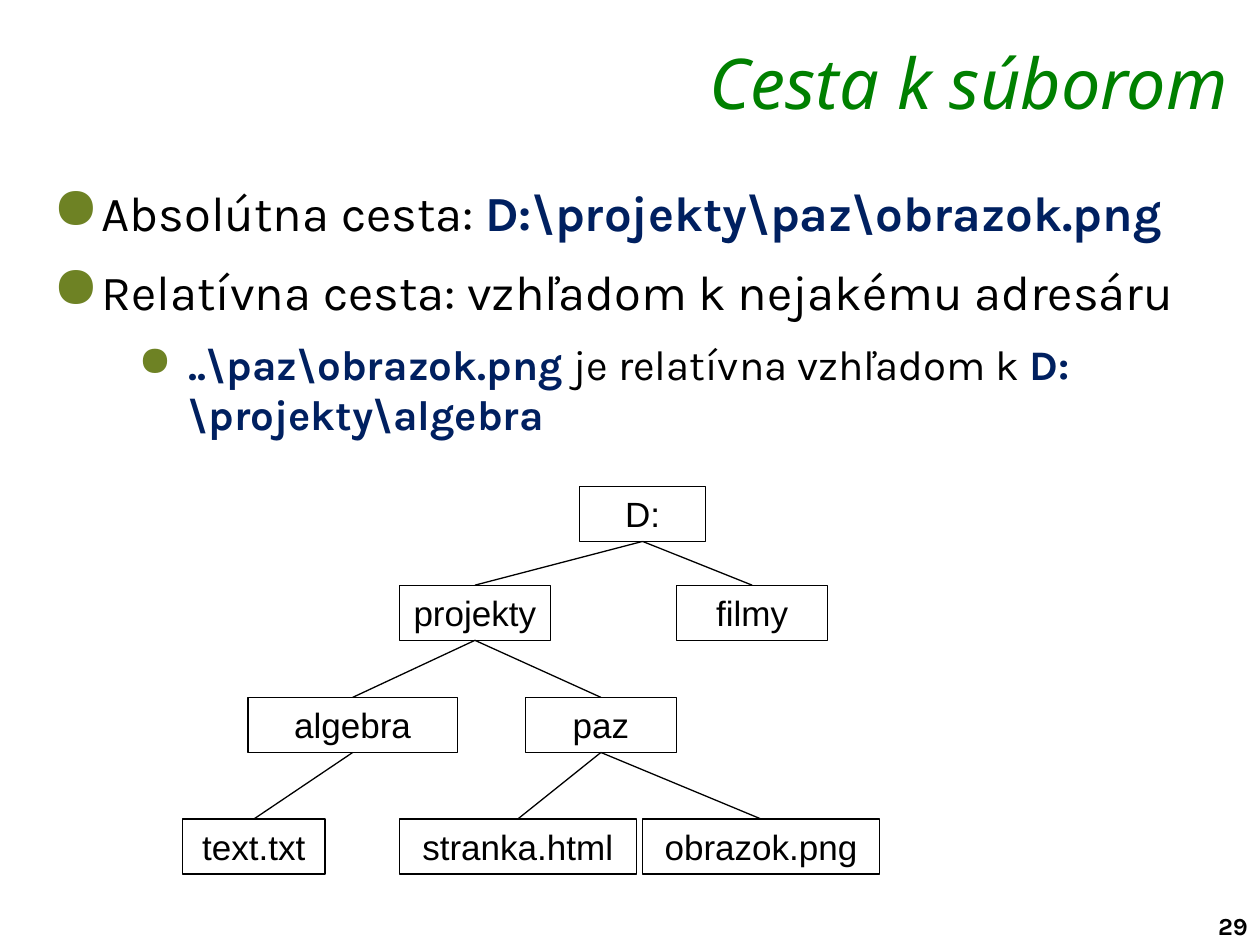
from lxml import etree
from pptx import Presentation
from pptx.dml.color import RGBColor
from pptx.enum.shapes import MSO_CONNECTOR as CONN, MSO_SHAPE as SHAPE
from pptx.enum.text import MSO_ANCHOR as ANCHOR, PP_ALIGN as ALIGN
from pptx.oxml.ns import qn
from pptx.util import Pt

BLACK = RGBColor(0x00, 0x00, 0x00)
WHITE = RGBColor(0xFF, 0xFF, 0xFF)
GREEN = RGBColor(0x00, 0x80, 0x00)
NAVY = RGBColor(0x00, 0x20, 0x60)
OLIVE = "6E8224"

prs = Presentation()
prs.slide_width, prs.slide_height = Pt(720), Pt(540)
s = prs.slides.add_slide(prs.slide_layouts[6])


def add_run(p, text, size, font, color, bold=False, italic=False):
    r = p.add_run()
    r.text = text
    r.font.size, r.font.name = Pt(size), font
    r.font.bold, r.font.italic = bold, italic
    r.font.color.rgb = color


def add_text_box(x, y, w, h):
    tf = s.shapes.add_textbox(Pt(x), Pt(y), Pt(w), Pt(h)).text_frame
    tf.word_wrap = True
    return tf


# Title
tf = add_text_box(165, 22.3, 543.5, 41.8)
tf.margin_top = tf.margin_bottom = 0
p = tf.paragraphs[0]
p.alignment = ALIGN.RIGHT
add_run(p, "Cesta k súborom", 40, "Noto Sans", GREEN, italic=True)

# Page number
p = add_text_box(689, 517, 37, 24).paragraphs[0]
add_run(p, "29", 14, "Karla", BLACK, bold=True)

# Bulleted text: size, left margin, indent, bullet size %, runs (text, is path)
bullets = [
    (28, 28, -28, 120, [("Absolútna cesta: ", False),
                        ("D:\\projekty\\paz\\obrazok.png", True)]),
    (28, 28, -28, 120, [("Relatívna cesta: vzhľadom k nejakému adresáru", False)]),
    (24, 77.8, -28.8, 100, [("..\\paz\\obrazok.png ", True),
                            ("je relatívna vzhľadom k ", False),
                            ("D:\\projekty\\algebra", True)]),
]
tf = add_text_box(23, 100.8, 675.4, 417.6)
for i, (size, margin, indent, bullet_size, runs) in enumerate(bullets):
    p = tf.paragraphs[0] if i == 0 else tf.add_paragraph()
    p.space_before = Pt(0.2 * size if i else 0)
    p.space_after = Pt(0.2 * size)
    pPr = p._p.get_or_add_pPr()
    pPr.set("marL", str(Pt(margin)))
    pPr.set("indent", str(Pt(indent)))
    clr = etree.SubElement(pPr, qn("a:buClr"))
    etree.SubElement(clr, qn("a:srgbClr"), val=OLIVE)
    etree.SubElement(pPr, qn("a:buSzPct"), val=str(bullet_size * 1000))
    etree.SubElement(pPr, qn("a:buChar"), char="●")
    for text, is_path in runs:
        add_run(p, text, size, "Karla", NAVY if is_path else BLACK, bold=is_path)

# Directory tree: name, left, width for each level
levels = [
    (277.9, [("D:", 331.2, 72)]),
    (334.4, [("projekty", 228.2, 86.4), ("filmy", 386.6, 86.4)]),
    (398.5, [("algebra", 141.8, 119.5), ("paz", 300.2, 86.4)]),
    (468, [("text.txt", 104.4, 81.4), ("stranka.html", 228.2, 135.4),
           ("obrazok.png", 367.2, 135.4)]),
]
nodes = {}
for top, row in levels:
    for name, left, width in row:
        sp = s.shapes.add_shape(SHAPE.RECTANGLE, Pt(left), Pt(top), Pt(width), Pt(31.5))
        sp.shadow.inherit = False
        sp.fill.solid()
        sp.fill.fore_color.rgb = WHITE
        sp.line.color.rgb = BLACK
        sp.line.width = Pt(0.75)
        tf = sp.text_frame
        tf.word_wrap = False
        tf.vertical_anchor = ANCHOR.MIDDLE
        p = tf.paragraphs[0]
        p.alignment = ALIGN.CENTER
        add_run(p, name, 20, "Arial", BLACK)
        nodes[name] = sp

# Branches from each directory to its contents
children = {
    "D:": ["projekty", "filmy"],
    "projekty": ["algebra", "paz"],
    "algebra": ["text.txt"],
    "paz": ["stranka.html", "obrazok.png"],
}
for parent, names in children.items():
    for name in names:
        c = s.shapes.add_connector(CONN.STRAIGHT, 0, 0, 0, 0)
        c.begin_connect(nodes[parent], 2)
        c.end_connect(nodes[name], 0)
        c.line.color.rgb = BLACK
        c.line.width = Pt(0.75)
        etree.SubElement(c._element.spPr, qn("a:effectLst"))

prs.save("out.pptx")
